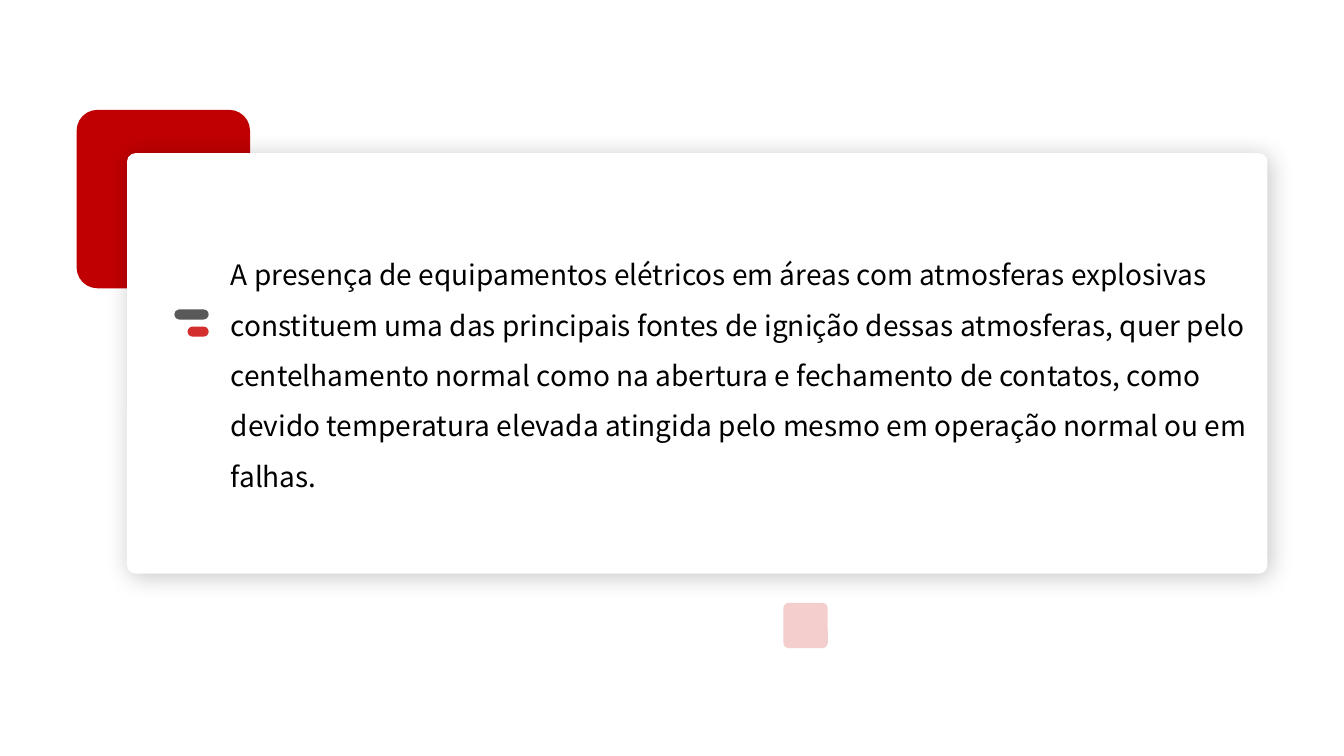
import dataclasses
import typing

import lxml.etree
import pptx
import pptx.dml.color
import pptx.enum.shapes
import pptx.enum.text
import pptx.oxml.ns
import pptx.util

SLIDE_WIDTH = pptx.util.Inches(13.33)
SLIDE_HEIGHT = pptx.util.Inches(7.5)
COLUMN = SLIDE_WIDTH / 1333
ROW = SLIDE_HEIGHT / 750
FONT_FORMAT = {"name": "Noto Sans CJK SC", "size": pptx.util.Pt(20)}
PARAGRAPH_FORMAT = {
    "line_spacing": pptx.util.Pt(36),
    "alignment": pptx.enum.text.PP_ALIGN.LEFT,
}
FRAME_FORMAT = {
    "word_wrap": True,
    "auto_size": pptx.enum.text.MSO_AUTO_SIZE.SHAPE_TO_FIT_TEXT,
}
BODY = (
    "A presença de equipamentos elétricos em áreas com atmosferas explosivas "
    "constituem uma das principais fontes de ignição dessas atmosferas, quer pelo "
    "centelhamento normal como na abertura e fechamento de contatos, como devido "
    "temperatura elevada atingida pelo mesmo em operação normal ou em falhas."
)


@dataclasses.dataclass(frozen=True)
class Area:
    column: int
    row: int
    columns: int
    rows: int

    def box(self) -> tuple[int, int, int, int]:
        return (
            round(self.column * COLUMN),
            round(self.row * ROW),
            round(self.columns * COLUMN),
            round(self.rows * ROW),
        )


@dataclasses.dataclass(frozen=True)
class RoundedPanel:
    area: Area
    rounding: float
    color: str
    opacity: int = 100
    raised: bool = False


RED_BLOCK = RoundedPanel(Area(76, 109, 172, 177), 0.12, "C00000")
CARD = RoundedPanel(Area(126, 152, 1131, 417), 0.02, "FFFFFF", raised=True)
TEXT_AREA = Area(219, 234, 1038, 257)
MARKER = [
    RoundedPanel(Area(173, 307, 34, 10), 0.5, "595959"),
    RoundedPanel(Area(186, 324, 21, 10), 0.5, "D32F2F"),
]
PALE_SQUARE = RoundedPanel(Area(777, 598, 44, 45), 0.12, "D32F2F", opacity=24)


def rgb(color: str) -> pptx.dml.color.RGBColor:
    return pptx.dml.color.RGBColor.from_string(color)


def apply_format(target: typing.Any, values: dict[str, typing.Any]) -> None:
    for name, value in values.items():
        setattr(target, name, value)


def add_element(parent: typing.Any, tag: str, **attributes: str) -> typing.Any:
    return lxml.etree.SubElement(parent, pptx.oxml.ns.qn(tag), attributes)


def add_card_shadow(shape: typing.Any) -> None:
    effects = shape._element.spPr.find(pptx.oxml.ns.qn("a:effectLst"))
    shadow = add_element(
        effects,
        "a:outerShdw",
        blurRad=str(pptx.util.Pt(17)),
        dist=str(pptx.util.Pt(3)),
        dir=str(45 * 60000),
        algn="tl",
        rotWithShape="0",
    )
    color = add_element(shadow, "a:srgbClr", val="000000")
    add_element(color, "a:alpha", val="24000")


def add_panel(shapes: typing.Any, panel: RoundedPanel) -> None:
    shape = shapes.add_shape(
        pptx.enum.shapes.MSO_SHAPE.ROUNDED_RECTANGLE, *panel.area.box()
    )
    shape.adjustments[0] = panel.rounding
    shape.fill.solid()
    shape.fill.fore_color.rgb = rgb(panel.color)
    shape.line.fill.background()
    shape.shadow.inherit = False
    if panel.opacity < 100:
        color = shape._element.spPr.find(".//" + pptx.oxml.ns.qn("a:srgbClr"))
        add_element(color, "a:alpha", val=str(panel.opacity * 1000))
    if panel.raised:
        add_card_shadow(shape)


def add_body(shapes: typing.Any, area: Area, text: str) -> None:
    frame = shapes.add_textbox(*area.box()).text_frame
    apply_format(frame, FRAME_FORMAT)
    paragraph = frame.paragraphs[0]
    apply_format(paragraph, PARAGRAPH_FORMAT)
    run = paragraph.add_run()
    run.text = text
    apply_format(run.font, FONT_FORMAT)
    run.font.color.rgb = rgb("000000")


def main() -> None:
    """Build the slide on explosive atmospheres and save it."""
    presentation = pptx.Presentation()
    apply_format(
        presentation, {"slide_width": SLIDE_WIDTH, "slide_height": SLIDE_HEIGHT}
    )
    slide = presentation.slides.add_slide(presentation.slide_layouts[6])
    add_panel(slide.shapes, RED_BLOCK)
    add_panel(slide.shapes, CARD)
    add_body(slide.shapes, TEXT_AREA, BODY)
    marker_group = slide.shapes.add_group_shape()
    for bar in MARKER:
        add_panel(marker_group.shapes, bar)
    add_panel(slide.shapes, PALE_SQUARE)
    presentation.save("out.pptx")


if __name__ == "__main__":
    main()
